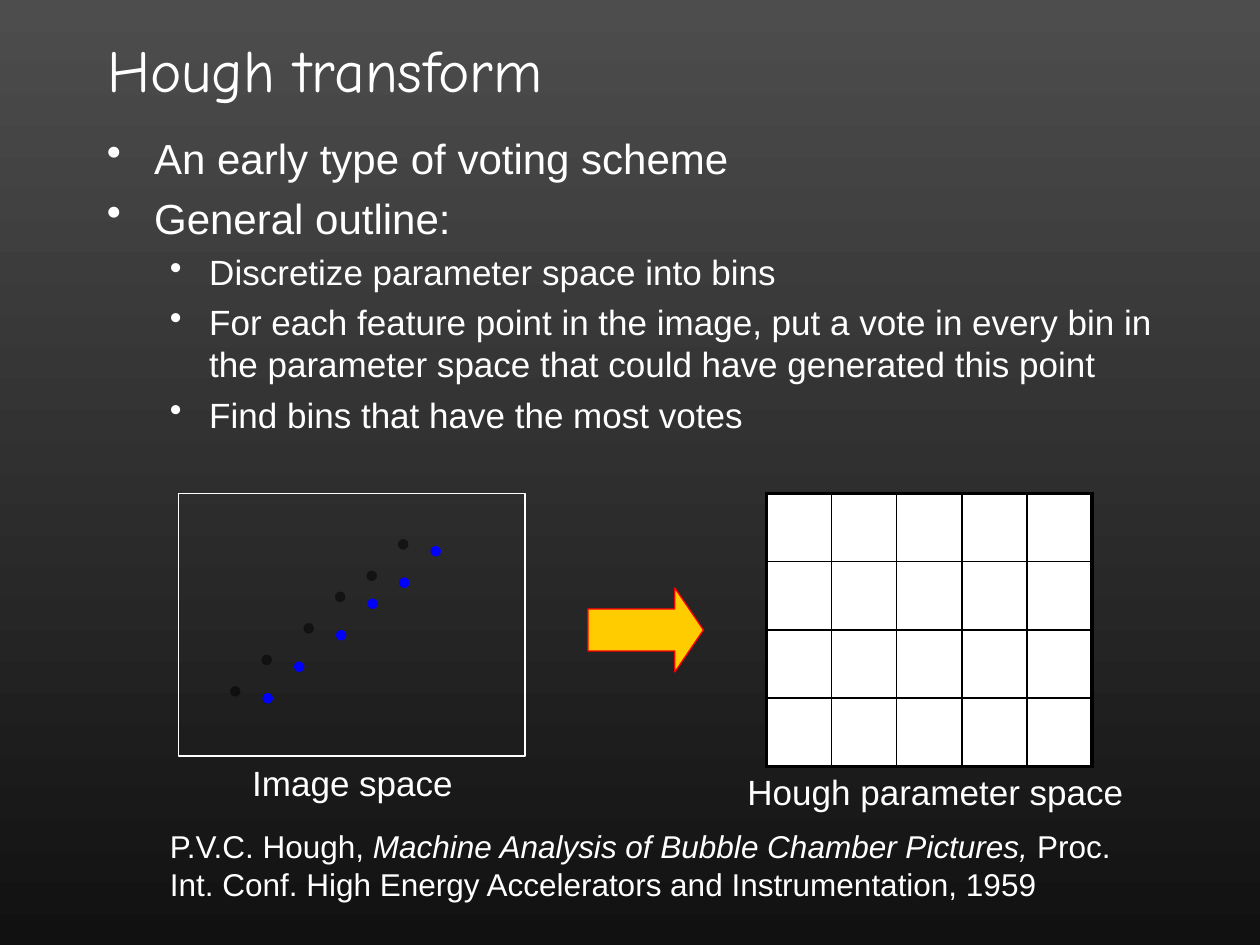
from dataclasses import dataclass

import pptx
import pptx.dml.color
import pptx.enum.dml
import pptx.enum.shapes
import pptx.enum.text
import pptx.oxml
import pptx.oxml.ns
import pptx.util

Pt = pptx.util.Pt
RGB = pptx.dml.color.RGBColor.from_string
SHAPE = pptx.enum.shapes.MSO_SHAPE
ANCHOR = pptx.enum.text.MSO_ANCHOR
NS = pptx.oxml.ns.nsdecls("a")


@dataclass(frozen=True)
class Theme:
    top: str = "4D4D4D"
    bottom: str = "111111"
    text: str = "FFFFFF"
    cell: str = "FFFFFF"
    grid: str = "000000"
    shadow: str = "000000"
    point: str = "0000FF"
    arrow: str = "FFCC00"
    arrow_edge: str = "FF0000"
    title_font: str = "Comic Neue"
    body_font: str = "Arial"
    title_size: float = 34
    outline_size: float = 24
    detail_size: float = 20
    citation_size: float = 18


THEME = Theme()

OUTLINE = [
    (0, "An early type of voting scheme"),
    (0, "General outline:"),
    (1, "Discretize parameter space into bins"),
    (1, "For each feature point in the image, put a vote in every bin "
        "in the parameter space that could have generated this point"),
    (1, "Find bins that have the most votes"),
]
# Per level: text indent, hanging indent, type size, space before
LEVELS = [(27, 27, THEME.outline_size, 5.6), (58.5, 22.5, THEME.detail_size, 4.6)]

# Feature points relative to the image space box
FEATURE_POINTS = [(48, 114), (66, 96), (90, 78), (108, 60), (126, 48), (144, 30)]
POINT_SIZE = 6


def add_run(paragraph, text, size, font=THEME.body_font, italic=None):
    run = paragraph.add_run()
    run.text = text
    run.font.size = Pt(size)
    run.font.name = font
    run.font.italic = italic
    run.font.color.rgb = RGB(THEME.text)


def add_text_frame(slide, box, wrap=True):
    frame = slide.shapes.add_textbox(*map(Pt, box)).text_frame
    frame.word_wrap = wrap
    return frame


def add_figure(slide, kind, box, fill=None, line=None):
    figure = slide.shapes.add_shape(kind, *map(Pt, box))
    figure.shadow.inherit = False
    if fill:
        figure.fill.solid()
        figure.fill.fore_color.rgb = RGB(fill)
    else:
        figure.fill.background()
    if line:
        figure.line.color.rgb = RGB(line)
        figure.line.width = Pt(0.75)
    else:
        figure.line.fill.background()
    return figure


def paint_background(slide):
    fill = slide.background.fill
    fill.gradient()
    fill.gradient_angle = 270
    for stop, color in zip(fill.gradient_stops, (THEME.top, THEME.bottom)):
        stop.color.rgb = RGB(color)


def place_title(slide, box):
    title = slide.shapes.title
    title.left, title.top, title.width, title.height = map(Pt, box)
    title.text_frame.vertical_anchor = ANCHOR.MIDDLE
    heading = title.text_frame.paragraphs[0]
    heading.alignment = pptx.enum.text.PP_ALIGN.LEFT
    add_run(heading, "Hough transform", THEME.title_size, THEME.title_font)


def place_outline(slide, box):
    frame = add_text_frame(slide, box)
    for index, (level, text) in enumerate(OUTLINE):
        point = frame.add_paragraph() if index else frame.paragraphs[0]
        indent, hanging, size, gap = LEVELS[level]
        point.level = level
        properties = point._p.get_or_add_pPr()
        properties.set("marL", str(Pt(indent)))
        properties.set("indent", str(-Pt(hanging)))
        properties.append(pptx.oxml.parse_xml(f'<a:buChar {NS} char="•"/>'))
        if index:
            point.space_before = Pt(gap)
        add_run(point, text, size)


def place_caption(slide, box, text):
    frame = add_text_frame(slide, box, wrap=False)
    add_run(frame.paragraphs[0], text, THEME.detail_size)


def place_image_space(slide, box):
    add_figure(slide, SHAPE.RECTANGLE, box, line=THEME.text)
    left, top = box[:2]
    for x, y in FEATURE_POINTS:
        point = add_figure(slide, SHAPE.OVAL,
                           (left + x, top + y, POINT_SIZE, POINT_SIZE), fill=THEME.point)
        # Faint shadow cast to the left
        effects = point._element.spPr.find(pptx.oxml.ns.qn("a:effectLst"))
        effects.append(pptx.oxml.parse_xml(
            f'<a:outerShdw {NS} dist="{Pt(19)}" dir="{192 * 60000}" rotWithShape="0">'
            f'<a:srgbClr val="{THEME.shadow}"><a:alpha val="50000"/></a:srgbClr>'
            f'</a:outerShdw>'))


def place_arrow(slide, box):
    arrow = add_figure(slide, SHAPE.RIGHT_ARROW, box, THEME.arrow, THEME.arrow_edge)
    arrow.adjustments[0] = 0.5
    arrow.adjustments[1] = 0.34


def place_parameter_space(slide, box, rows=4, columns=5):
    bins = slide.shapes.add_table(rows, columns, *map(Pt, box)).table
    bins.first_row = bins.horz_banding = False
    for column in bins.columns:
        column.width = Pt(box[2] / columns)
    for row in bins.rows:
        row.height = Pt(box[3] / rows)
    for r in range(rows):
        for c in range(columns):
            cell = bins.cell(r, c)
            # Heavy frame outside, thin lines inside
            outer = {"L": c == 0, "R": c == columns - 1, "T": r == 0, "B": r == rows - 1}
            properties = cell._tc.get_or_add_tcPr()
            for side, heavy in outer.items():
                properties.append(pptx.oxml.parse_xml(
                    f'<a:ln{side} {NS} w="{Pt(2.25 if heavy else 1)}"><a:solidFill>'
                    f'<a:srgbClr val="{THEME.grid}"/></a:solidFill></a:ln{side}>'))
            cell.fill.solid()
            cell.fill.fore_color.rgb = RGB(THEME.cell)


def place_citation(slide, box):
    frame = add_text_frame(slide, box)
    frame.vertical_anchor = ANCHOR.MIDDLE
    citation = frame.paragraphs[0]
    add_run(citation, "P.V.C. Hough, ", THEME.citation_size)
    add_run(citation, "Machine Analysis of Bubble Chamber Pictures,",
            THEME.citation_size, italic=True)
    add_run(citation, " Proc. Int. Conf. High Energy Accelerators and Instrumentation, 1959",
            THEME.citation_size)


def main():
    deck = pptx.Presentation()
    deck.slide_width, deck.slide_height = Pt(720), Pt(540)
    slide = deck.slides.add_slide(deck.slide_layouts.get_by_name("Title Only"))
    paint_background(slide)
    place_title(slide, (54, 6, 612, 66))
    place_outline(slide, (54, 72, 612, 414))
    place_citation(slide, (90, 468.5, 561.5, 51))
    # Voting diagram
    place_image_space(slide, (102, 282, 198, 150))
    place_arrow(slide, (336, 336, 66, 48))
    place_parameter_space(slide, (438, 282, 186, 156))
    place_caption(slide, (137, 431.5, 131.5, 31.5), "Image space")
    place_caption(slide, (420, 437, 236, 31.5), "Hough parameter space")
    deck.save("out.pptx")


if __name__ == "__main__":
    main()
